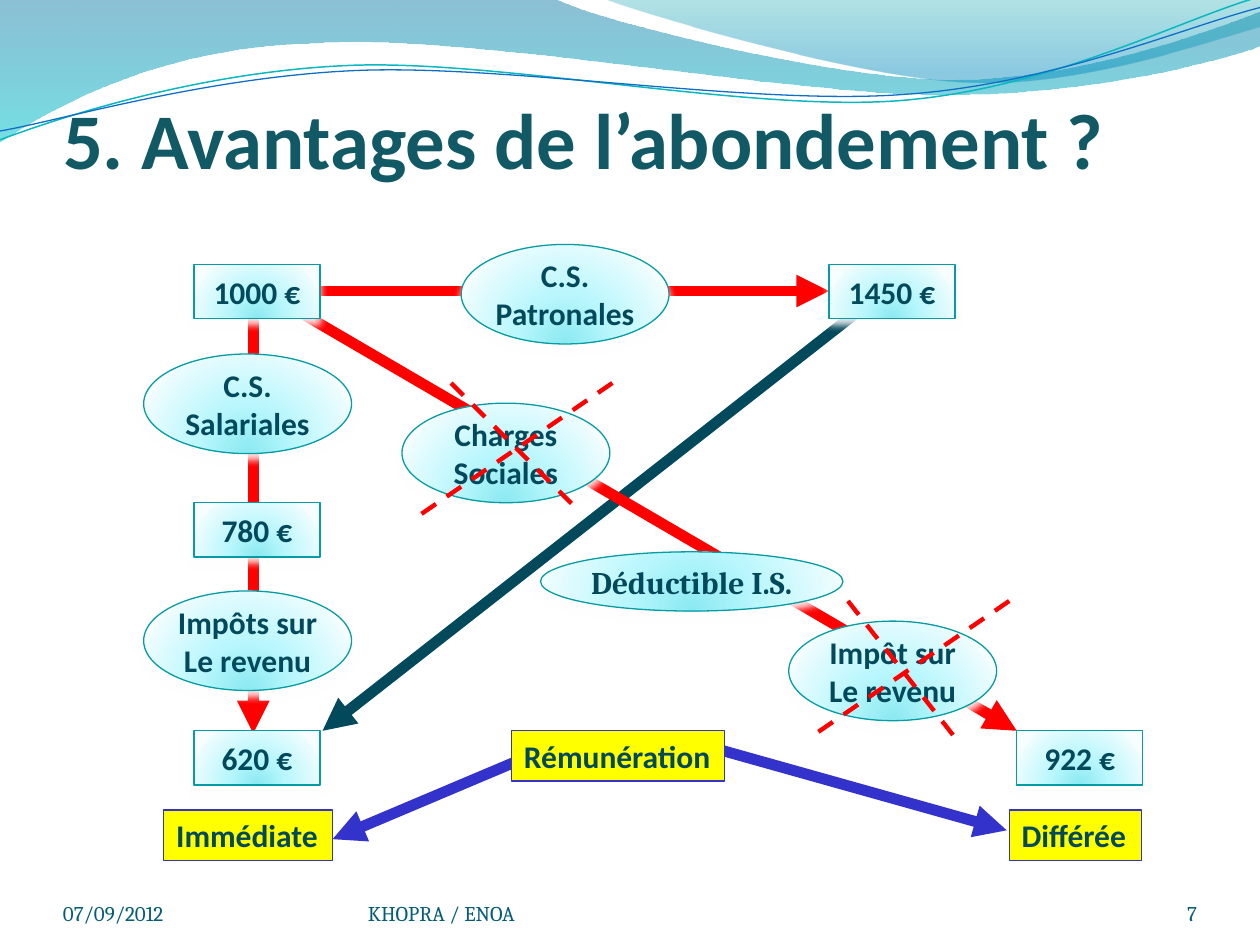
from collections import namedtuple

from lxml import etree
from pptx import Presentation
from pptx import util as u
from pptx.dml.color import RGBColor
from pptx.enum import dml, shapes, text
from pptx.oxml import ns, parse_xml

PX = 9144
TEAL = RGBColor(0x03, 0x49, 0x5C)
TITLE = RGBColor(0x11, 0x59, 0x64)
FOOT = RGBColor(0x04, 0x5D, 0x75)
EDGE = RGBColor(0x06, 0x9C, 0xA3)
RED = RGBColor(0xFF, 0x00, 0x00)
BLUE = RGBColor(0x33, 0x33, 0xCC)
YELLOW = RGBColor(0xFF, 0xFF, 0x00)
HALO = RGBColor(0xFF, 0xFF, 0xFF)
WAVE_TEAL = RGBColor(0x0A, 0xB8, 0xBF)
WAVE_BLUE = RGBColor(0x0F, 0x6F, 0xC6)
AQUA_STOPS = [(0, RGBColor(0x8B, 0xE9, 0xF1), 100), (43, RGBColor(0xB9, 0xF7, 0xFD), 100),
              (93, RGBColor(0xEA, 0xFC, 0xFE), 100), (100, RGBColor(0xF8, 0xFE, 0xFF), 100)]
LEFT_STOPS = [(0, RGBColor(0x00, 0x74, 0xA1), 45), (100, RGBColor(0x00, 0xC6, 0xCF), 55)]
RIGHT_STOPS = [(0, RGBColor(0x00, 0xA1, 0xA9), 30), (80, RGBColor(0x00, 0x8B, 0xBF), 45)]
DOWNWARD = '<a:lin ang="5400000" scaled="0"/>'
FROM_BELOW = ('<a:path path="circle"><a:fillToRect l="50000" t="130000" '
              'r="50000" b="-30000"/></a:path>')

Box = namedtuple("Box", "left top width height")


def inside(box, left, top, width, height):
    """Return the EMU frame of a part placed relative to a box."""
    return [n * PX for n in (box.left + left, box.top + top, width, height)]


def tint(color, alpha):
    """Return the XML of a colour with its opacity in percent."""
    return f'<a:srgbClr val="{color}"><a:alpha val="{alpha * 1000}"/></a:srgbClr>'


def paint_gradient(shape, stops, direction):
    """Fill a shape with a gradient."""
    shape.fill.background()
    marks = "".join(f'<a:gs pos="{at * 1000}">{tint(color, alpha)}</a:gs>'
                    for at, color, alpha in stops)
    blank = shape._element.spPr.find(ns.qn("a:noFill"))
    blank.getparent().replace(blank, parse_xml(
        f'<a:gradFill {ns.nsdecls("a")} rotWithShape="1">'
        f'<a:gsLst>{marks}</a:gsLst>{direction}</a:gradFill>'))


def add_halo(shape):
    """Give a shape a soft pale shadow below."""
    shape.shadow.inherit = False
    effects = shape._element.spPr.find(ns.qn("a:effectLst"))
    effects.append(parse_xml(
        f'<a:outerShdw {ns.nsdecls("a")} blurRad="57150" dist="38100" dir="5400000" '
        f'rotWithShape="0">{tint(HALO, 90)}</a:outerShdw>'))


def write(frame, lines, size, color, font="Calibri", bold=True, align=text.PP_ALIGN.LEFT):
    """Write one paragraph for each line."""
    for index, line in enumerate(lines):
        para = frame.paragraphs[0] if index == 0 else frame.add_paragraph()
        para.alignment = align
        span = para.add_run()
        span.text = line
        span.font.name, span.font.size, span.font.bold = font, u.Pt(size), bold
        span.font.color.rgb = color


def add_line(page, box, start, end, color, width=6.25, dashed=False):
    """Draw a solid arrow or a dashed line relative to a box."""
    ends = [(side + n) * PX for point in (start, end)
            for side, n in zip((box.left, box.top), point)]
    line = page.shapes.add_connector(shapes.MSO_CONNECTOR.STRAIGHT, *ends)
    line.line.color.rgb = color
    line.line.width = u.Pt(width)
    if dashed:
        line.line.dash_style = dml.MSO_LINE.DASH
    else:
        etree.SubElement(line.line._get_or_add_ln(), ns.qn("a:tailEnd"), type="triangle")
    etree.SubElement(line._element.spPr, ns.qn("a:effectLst"))


def add_node(page, frame, kind, lines, font="Calibri"):
    """Add a pale aqua node with centred text."""
    node = page.shapes.add_shape(kind, *frame)
    paint_gradient(node, AQUA_STOPS, FROM_BELOW)
    node.line.color.rgb = EDGE
    node.line.width = u.Pt(0.75)
    add_halo(node)
    node.text_frame.word_wrap = False
    node.text_frame.vertical_anchor = text.MSO_ANCHOR.MIDDLE
    write(node.text_frame, lines, 18, TEAL, font, align=text.PP_ALIGN.CENTER)


def add_outline(page, box, start, pieces, close):
    """Add a freeform of straight pieces (2 numbers) and Bézier pieces (6 numbers)."""
    knots = [start] + [knot for piece in pieces for knot in zip(piece[::2], piece[1::2])]
    points = [((box.left + x) * PX, (box.top + y) * PX) for x, y in knots]
    builder = page.shapes.build_freeform(*points[0])
    builder.add_line_segments(points[1:], close=close)
    shape = builder.convert_to_shape()
    shape.shadow.inherit = False
    steps = iter(list(shape._element.iter(ns.qn("a:lnTo"))))
    for piece in pieces:
        first = next(steps)
        if len(piece) == 6:
            first.tag = ns.qn("a:cubicBezTo")
            for step in (next(steps), next(steps)):
                first.append(step[0])
                step.getparent().remove(step)
    return shape


def draw_waves(page, box):
    """Draw the two bands and the two thin curves at the top."""
    bands = [
        ((0, 0), [(440, -1), (476, 17, 664, 63, 758, 63), (853, 63, 958, 26, 1000, 9),
                  (1001, 36), (983, 44, 870, 76, 746, 75), (622, 75, 382, 28, 257, 34),
                  (129, 36, 46, 83, -1, 113)], LEFT_STOPS),
        ((479, -1), [(509, 11, 682, 62, 769, 65), (856, 69, 961, 32, 1000, 21),
                     (1000, 0)], RIGHT_STOPS)]
    for start, pieces, stops in bands:
        band = add_outline(page, box, start, pieces, True)
        paint_gradient(band, stops, DOWNWARD)
        band.line.fill.background()
    curves = [
        ((0, 111), [(48, 93, 158, 57, 277, 52), (395, 47, 593, 89, 713, 80),
                    (833, 71, 938, 15, 998, -2)], WAVE_TEAL, 0.85),
        ((0, 104), [(47, 96, 164, 61, 283, 56), (403, 51, 597, 84, 717, 75),
                    (836, 67, 941, 21, 1000, 6)], WAVE_BLUE, 0.75)]
    for start, pieces, color, width in curves:
        curve = add_outline(page, box, start, pieces, False)
        curve.fill.background()
        curve.line.color.rgb = color
        curve.line.width = u.Pt(width)


def place_title(page, box):
    """Place the title in front of the waves."""
    title = page.shapes.title
    title._element.getparent().append(title._element)
    title.left, title.top, title.width, title.height = inside(box, 0, 0, box.width, box.height)
    frame = title.text_frame
    frame.auto_size = text.MSO_AUTO_SIZE.NONE
    frame.word_wrap = True
    frame.vertical_anchor = text.MSO_ANCHOR.BOTTOM
    frame.margin_left = frame.margin_right = frame.margin_bottom = 0
    frame.margin_top = 5 * PX
    write(frame, ["5. Avantages de l’abondement ?"], 45, TITLE)


def draw_flows(page, box):
    """Draw the amounts, the charges and the arrows between them."""
    for start, end, color in [((575, 47), (142, 386), TEAL), ((126, 37), (544, 37), RED),
                              ((87, 55), (87, 388), RED), ((126, 55), (693, 386), RED)]:
        add_line(page, box, start, end, color)
    for left, top, amount in [(40, 16, "1000 €"), (544, 16, "1450 €"), (40, 205, "780 €"),
                              (40, 386, "620 €"), (693, 386, "922 €")]:
        add_node(page, inside(box, left, top, 100, 43),
                 shapes.MSO_SHAPE.FLOWCHART_PROCESS, [amount])
    for left, top, *lines in [(0, 87, "C.S.", "Salariales"), (0, 275, "Impôts sur", "Le revenu"),
                              (252, 0, "C.S.", "Patronales"), (205, 126, "Charges", "Sociales"),
                              (512, 299, "Impôt sur", "Le revenu")]:
        add_node(page, inside(box, left, top, 165, 79), shapes.MSO_SHAPE.OVAL, lines)
    add_node(page, inside(box, 315, 244, 240, 47), shapes.MSO_SHAPE.OVAL,
             ["Déductible I.S."], "Cambria")


def draw_pay(page, box):
    """Draw the yellow labels and the arrows that part from the middle one."""
    add_line(page, box, (283, 23), (134, 86), BLUE)
    add_line(page, box, (441, 15), (669, 79), BLUE)
    for left, top, width, label in [(276, 0, 169, "Rémunération"), (0, 63, 134, "Immédiate"),
                                    (671, 63, 105, "Différée")]:
        tag = page.shapes.add_shape(shapes.MSO_SHAPE.RECTANGLE, *inside(box, left, top, width, 40))
        tag.shadow.inherit = False
        tag.fill.solid()
        tag.fill.fore_color.rgb = YELLOW
        tag.line.color.rgb = BLUE
        tag.line.width = u.Pt(0.75)
        tag.text_frame.word_wrap = False
        tag.text_frame.auto_size = text.MSO_AUTO_SIZE.SHAPE_TO_FIT_TEXT
        tag.text_frame.vertical_anchor = text.MSO_ANCHOR.TOP
        write(tag.text_frame, [label], 18, TEAL)


def draw_cross(page, box, foot):
    """Strike out a charge with two dashed lines."""
    add_line(page, box, (31, 0), foot, RED, 2.5, True)
    add_line(page, box, (box.width, 0), (0, box.height), RED, 2.5, True)


def draw_footer(page, box):
    """Write the date, the author and the page number."""
    for left, width, words, align in [(0, 233, "07/09/2012", text.PP_ALIGN.LEFT),
                                      (817, 83, "7", text.PP_ALIGN.RIGHT),
                                      (242, 367, "KHOPRA / ENOA", text.PP_ALIGN.LEFT)]:
        frame = page.shapes.add_textbox(*inside(box, left, 0, width, box.height)).text_frame
        frame.word_wrap = True
        frame.vertical_anchor = text.MSO_ANCHOR.BOTTOM
        frame.margin_left = frame.margin_right = frame.margin_top = frame.margin_bottom = 0
        write(frame, [words], 12, FOOT, "Cambria", False, align)


def main():
    """Build the deck."""
    deck = Presentation()
    deck.slide_width, deck.slide_height = 1000 * PX, 750 * PX
    page = deck.slides.add_slide(deck.slide_layouts[5])
    draw_waves(page, Box(0, 0, 1000, 114))
    place_title(page, Box(50, 77, 900, 70))
    draw_flows(page, Box(114, 194, 793, 429))
    draw_pay(page, Box(130, 580, 776, 103))
    draw_cross(page, Box(642, 477, 159, 109), (118, 111))
    draw_cross(page, Box(327, 304, 159, 109), (131, 100))
    draw_footer(page, Box(50, 695, 900, 40))
    deck.save("out.pptx")


if __name__ == "__main__":
    main()
